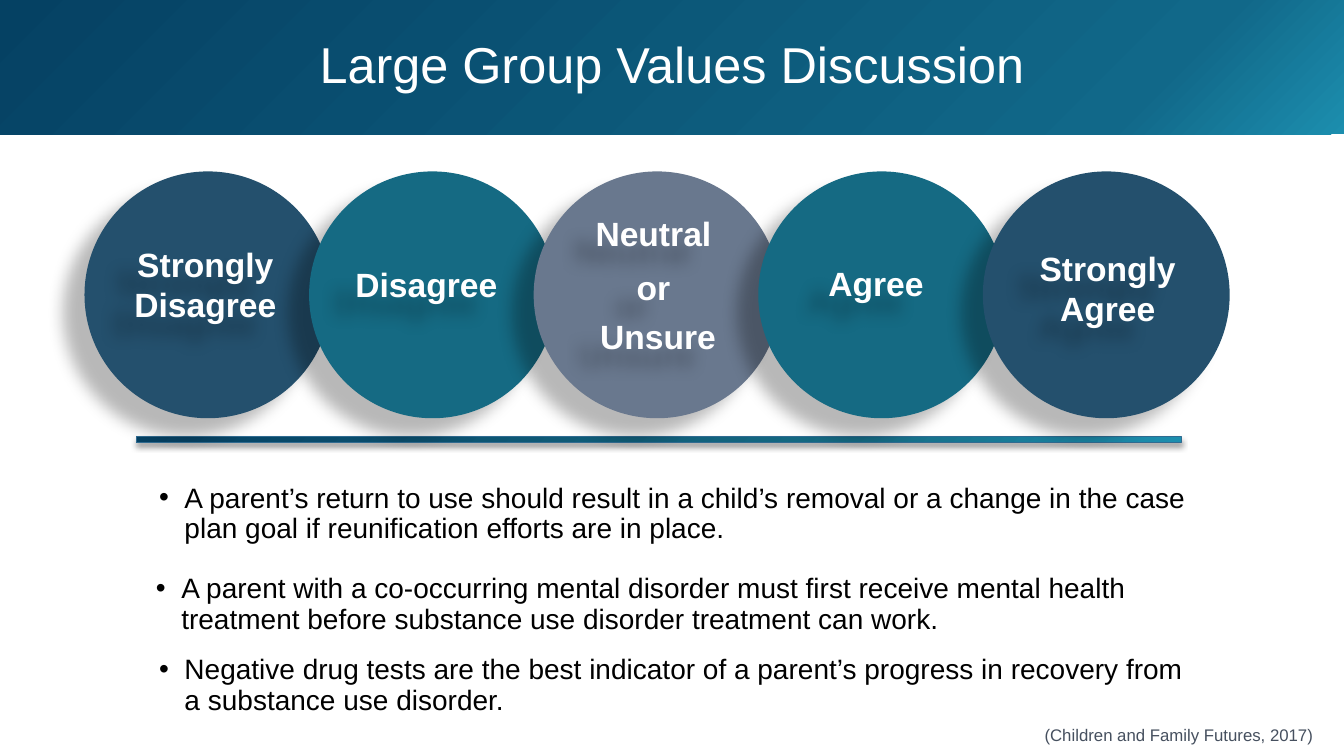
"""Build the values discussion slide: a five-step agreement scale above three statements."""
from dataclasses import dataclass

from lxml import etree
from pptx import Presentation
from pptx.dml.color import RGBColor
from pptx.enum import shapes, text
from pptx.oxml import ns
from pptx.util import Cm, Pt

TITLE = "Large Group Values Discussion"
SCALE = [
    {"lines": ["Strongly Disagree"], "fill": "24506D", "at": (2.51, 5.51), "spacing": 1},
    {"lines": ["Disagree"], "fill": "156A83", "at": (8.08, 5.56), "spacing": 0.9},
    {"lines": ["Neutral ", "or ", "Unsure"], "fill": "69788E", "at": (13.92, 5.51), "spacing": 1},
    {"lines": ["Agree"], "fill": "156A83", "at": (19.41, 5.54), "spacing": 0.9},
    {"lines": ["Strongly\vAgree"], "fill": "24506D", "at": (25.25, 5.61), "spacing": 1},
]
LABEL_GAPS = [0, 10, 6]
STATEMENTS = [
    ("A parent’s return to use should result in a child’s removal or a change in the case "
     "plan goal if reunification efforts are in place.", (3.76, 12.14, 26.52, 1.63)),
    ("A parent with a co-occurring mental disorder must first receive mental health "
     "treatment before substance use disorder treatment can work.", (3.68, 14.43, 26.52, 1.63)),
    ("Negative drug tests are the best indicator of a parent’s progress in recovery from "
     "a substance use disorder.", (3.76, 16.74, 26.52, 1.09)),
]
CITATION = "(Children and Family Futures, 2017)"


@dataclass(frozen=True)
class Theme:
    font: str = "Arial"
    white: str = "FFFFFF"
    black: str = "000000"
    grey: str = "46505F"
    edge: str = "306B91"
    title_size: int = 36
    label_size: int = 24
    body_size: int = 20
    citation_size: int = 12
    banner: tuple = ((0, "1C8EAE"), (16, "116889"), (100, "054163"))
    bar: tuple = ((0, "1C8EAE"), (32, "156A83"), (100, "054163"))
    circle_shadow: tuple = (28, 11.8, 19.7, 141)
    bar_shadow: tuple = (40, 4, 3, 90)


THEME = Theme()
DIAMETER, PITCH, SCALE_LEFT, SCALE_TOP = 6.22, 5.66, 2.13, 4.32


def add_xml(parent, tag, **attributes):
    return etree.SubElement(parent, ns.qn(tag), {k: str(v) for k, v in attributes.items()})


def set_gradient(shape, stops):
    shape.fill.gradient()
    shape.fill.gradient_angle = 135
    stop_list = shape._element.spPr.find(".//" + ns.qn("a:gsLst"))
    for stop in list(stop_list):
        stop_list.remove(stop)
    for position, color in stops:
        stop = add_xml(stop_list, "a:gs", pos=position * 1000)
        add_xml(stop, "a:srgbClr", val=color)


def set_shadow(shape, shadow):
    opacity, blur, distance, angle = shadow
    shape.shadow.inherit = False
    effects = shape._element.spPr.find(ns.qn("a:effectLst"))
    outer = add_xml(effects, "a:outerShdw", blurRad=int(Pt(blur)), dist=int(Pt(distance)),
                    dir=angle * 60000, algn="ctr", rotWithShape=0)
    color = add_xml(outer, "a:srgbClr", val=THEME.black)
    add_xml(color, "a:alpha", val=opacity * 1000)


def style(paragraph, size, color, align, spacing=None, bold=False):
    paragraph.alignment = align
    paragraph.line_spacing = spacing
    font = paragraph.font
    font.name, font.size, font.bold = THEME.font, Pt(size), bold
    font.color.rgb = RGBColor.from_string(color)


def add_text_box(slide, box):
    shape = slide.shapes.add_textbox(*map(Cm, box))
    frame = shape.text_frame
    frame.word_wrap = True
    frame.vertical_anchor = text.MSO_ANCHOR.MIDDLE
    return shape, frame


def add_bar(slide):
    bar = slide.shapes.add_shape(shapes.MSO_SHAPE.RECTANGLE, Cm(3.43), Cm(11), Cm(26.34), Cm(0.16))
    set_gradient(bar, THEME.bar)
    bar.line.color.rgb = RGBColor.from_string(THEME.edge)
    bar.line.width = Pt(0.5)
    set_shadow(bar, THEME.bar_shadow)


def add_circle(slide, index, step):
    circle = slide.shapes.add_shape(
        shapes.MSO_SHAPE.OVAL, Cm(SCALE_LEFT + index * PITCH), Cm(SCALE_TOP), Cm(DIAMETER), Cm(DIAMETER))
    circle.fill.solid()
    circle.fill.fore_color.rgb = RGBColor.from_string(step["fill"])
    circle.line.fill.background()
    set_shadow(circle, THEME.circle_shadow)


def add_label(slide, step):
    label, frame = add_text_box(slide, (*step["at"], 5.33, 3.3))
    set_shadow(label, THEME.circle_shadow)
    frame.text = "\n".join(step["lines"])
    for paragraph, gap in zip(frame.paragraphs, LABEL_GAPS):
        style(paragraph, THEME.label_size, THEME.white, text.PP_ALIGN.CENTER, step["spacing"], True)
        paragraph.space_before = Pt(gap)


def add_statement(slide, statement, box):
    _, frame = add_text_box(slide, box)
    frame.text = statement
    paragraph = frame.paragraphs[0]
    properties = paragraph._p.get_or_add_pPr()
    properties.set("marL", str(int(Cm(0.64))))
    properties.set("indent", str(-int(Cm(0.64))))
    add_xml(properties, "a:buFont", typeface=THEME.font)
    add_xml(properties, "a:buChar", char="•")
    style(paragraph, THEME.body_size, THEME.black, text.PP_ALIGN.LEFT, 0.9)


def add_title(slide):
    title = slide.shapes.title
    title.left, title.top, title.width, title.height = Cm(0), Cm(0), Cm(33.87), Cm(3.38)
    set_gradient(title, THEME.banner)
    frame = title.text_frame
    frame.text = TITLE
    frame.auto_size = text.MSO_AUTO_SIZE.NONE
    frame.vertical_anchor = text.MSO_ANCHOR.MIDDLE
    style(frame.paragraphs[0], THEME.title_size, THEME.white, text.PP_ALIGN.CENTER, 0.9)


def add_citation(slide):
    _, frame = add_text_box(slide, (21.67, 18.01, 11.43, 1.02))
    frame.margin_right = Cm(0)
    frame.text = CITATION
    style(frame.paragraphs[0], THEME.citation_size, THEME.grey, text.PP_ALIGN.RIGHT)


def main():
    presentation = Presentation()
    presentation.slide_width, presentation.slide_height = Cm(33.87), Cm(19.05)
    slide = presentation.slides.add_slide(presentation.slide_layouts.get_by_name("Title Only"))
    add_title(slide)
    add_bar(slide)
    for index, step in enumerate(SCALE):
        add_circle(slide, index, step)
    for step in SCALE:
        add_label(slide, step)
    for statement, box in STATEMENTS:
        add_statement(slide, statement, box)
    add_citation(slide)
    presentation.save("out.pptx")


if __name__ == "__main__":
    main()
